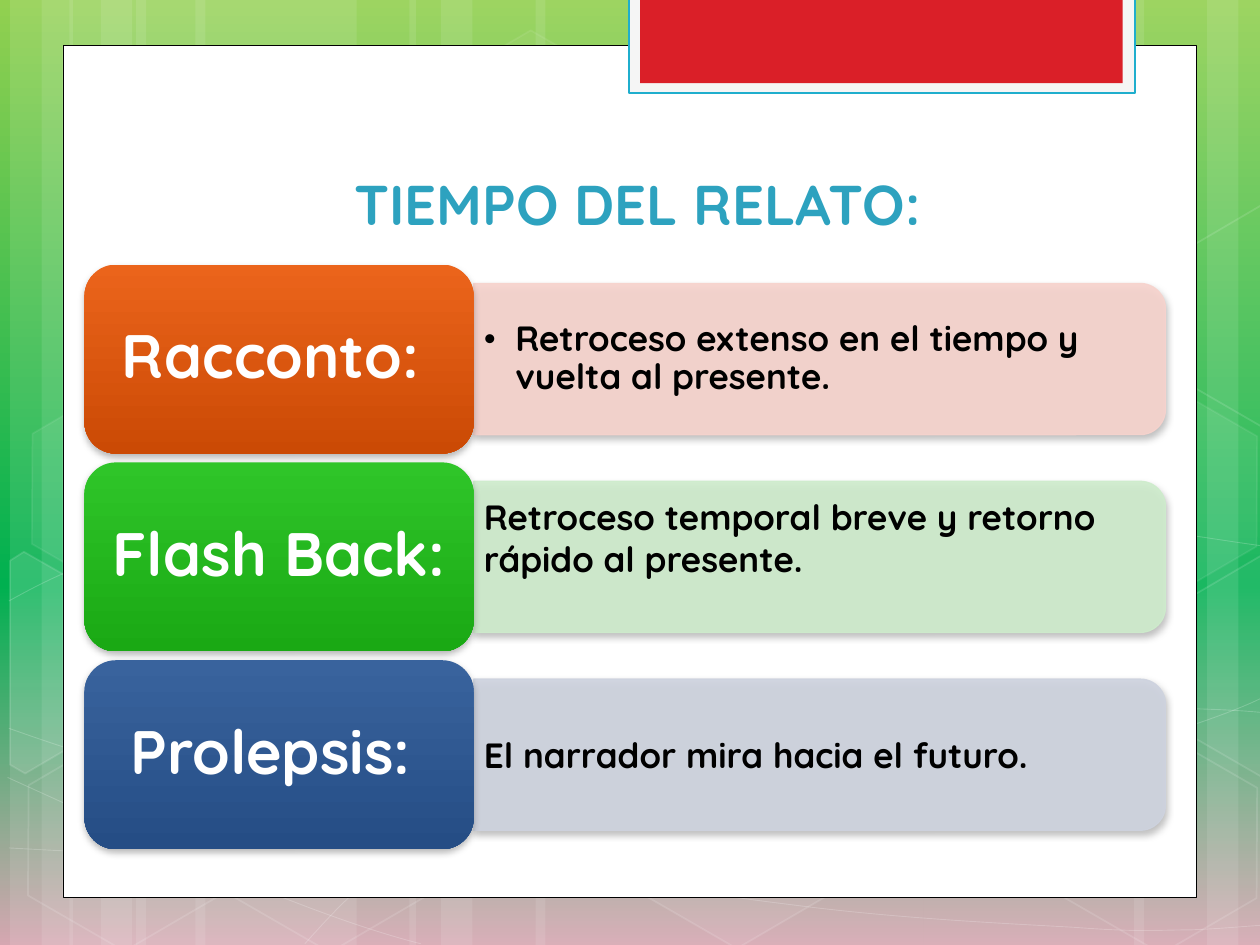
import lxml.etree
import pptx
import pptx.util
from pptx.dml.color import RGBColor
from pptx.enum.shapes import MSO_SHAPE
from pptx.enum.text import MSO_ANCHOR, MSO_AUTO_SIZE, PP_ALIGN
from pptx.oxml.ns import qn
from pptx.util import Inches

FONT = "Quicksand"
WHITE = RGBColor(0xFF, 0xFF, 0xFF)
BLACK = RGBColor(0, 0, 0)
TITLE_BLUE = RGBColor(0x2D, 0xA2, 0xBF)
TAB_BORDER = RGBColor(0x1F, 0xAE, 0xCD)
TAB_GRAY = RGBColor(0xF5, 0xF5, 0xF5)
TAB_RED = RGBColor(0xDA, 0x1F, 0x28)
BACKGROUND = [(0, RGBColor(0x92, 0xD0, 0x50)), (62, RGBColor(0x00, 0xB0, 0x50)),
              (100, RGBColor(0xD5, 0xA7, 0xB1))]

# Label, definition, label gradient top and bottom, bar colour
ROWS = [
    ("Racconto: ", "Retroceso extenso en el tiempo y vuelta al presente.",
     RGBColor(0xEB, 0x64, 0x1B), RGBColor(0xCB, 0x4A, 0x05), RGBColor(0xF7, 0xD3, 0xCD)),
    ("Flash Back: ", "Retroceso temporal breve y retorno rápido al presente.",
     RGBColor(0x2F, 0xC5, 0x29), RGBColor(0x1A, 0xA9, 0x14), RGBColor(0xCE, 0xEC, 0xCC)),
    ("Prolepsis: ", "El narrador mira hacia el futuro.",
     RGBColor(0x39, 0x63, 0x9D), RGBColor(0x25, 0x4D, 0x85), RGBColor(0xCE, 0xD3, 0xDF)),
]
ROW_TOP, ROW_PITCH, LABEL_HEIGHT = 2.1, 1.57, 1.5
LABEL_LEFT, LABEL_WIDTH = 0.67, 3.09
BAR_LENGTH, BAR_HEIGHT = 5.49, 1.2

# Left and width of the translucent vertical strips
STRIPS = [(1.08, 1.75), (0.08, 0.5), (0.33, 0.83), (1.55, 1.75), (0.55, 0.5), (0.8, 0.83),
          (7.33, 1.75), (9.58, 0.5), (9, 0.83), (4.25, 3.08), (3.25, 0.5), (3.5, 0.83)]
# Left, top, fill opacity and line opacity
HEXAGONS = [(3.34, 0.36, 4, 8), (4.97, 5.89, 6, 12), (0.11, 5.91, 0, 12),
            (0.14, 3.12, 7, 8), (1.74, 5.92, 0, 12), (7.53, 4.53, 10, 12),
            (8.34, 5.93, 0, 12), (8.34, 3.14, 7, 8)]
# Fill opacity and corners of the hexagons cut by the slide edge
CUT_HEXAGONS = [
    (10, [(0.08, 4.45), (0.19, 4.38), (0.96, 4.82), (0.95, 5.7), (0.2, 6.14), (0.08, 6.07)]),
    (4, [(9.26, 4.85), (10.01, 4.41), (10.09, 4.46), (10.09, 6.13), (10.02, 6.17), (9.26, 5.73)]),
    (0, [(9.26, 2.07), (10.01, 1.63), (10.1, 1.68), (10.09, 3.35), (10.02, 3.39), (9.26, 2.95)]),
]
# Bezier chains: a start point, then two control points and an end point per piece
CURVES = [
    [(0.07, 6.73), (0.61, 6.76), (1.15, 6.79), (1.9, 6.78), (2.65, 6.77), (3.58, 6.75),
     (4.58, 6.65), (5.58, 6.55), (7, 6.36), (7.92, 6.17), (8.83, 5.98), (9.77, 5.68),
     (10.07, 5.51)],
    [(0.07, 4.77), (0.36, 4.61), (0.65, 4.46), (1.21, 4.31), (1.78, 4.16), (2.59, 3.94),
     (3.47, 3.87), (4.36, 3.8), (5.44, 3.79), (6.54, 3.87), (7.64, 3.95), (9.47, 4.26),
     (10.07, 4.34)],
    [(0.06, 6.17), (1.27, 6.72), (2.47, 7.27), (3.34, 7.49)],
    [(0.07, 5.78), (0.38, 5.89), (0.7, 6), (1.28, 6.16), (1.86, 6.31), (2.73, 6.56),
     (3.57, 6.73), (4.4, 6.9), (5.45, 7.08), (6.28, 7.18), (7.11, 7.29), (8, 7.33),
     (8.53, 7.36), (9.05, 7.4), (9.19, 7.38), (9.45, 7.38), (9.71, 7.37), (9.89, 7.35),
     (10.07, 7.34)],
    [(2.42, 7.49), (2.6, 7.29), (2.78, 7.09), (3.02, 6.91), (3.26, 6.73), (3.6, 6.53),
     (3.88, 6.39), (4.16, 6.25), (4.33, 6.19), (4.7, 6.09), (5.06, 5.99), (5.73, 5.85),
     (6.08, 5.78), (6.44, 5.71), (6.49, 5.71), (6.8, 5.69), (7.11, 5.66), (7.6, 5.63),
     (7.94, 5.62), (8.29, 5.61), (8.86, 5.62), (8.86, 5.62), (9.2, 5.62), (9.7, 5.62),
     (10.06, 5.66)],
]


def set_solid(fill, color, opacity=100):
    """Fill with a colour at an opacity in percent; zero means no fill."""
    if opacity == 0:
        fill.background()
        return
    fill.solid()
    fill.fore_color.rgb = color
    if opacity < 100:
        color_element = fill._xPr.find(qn("a:solidFill")).find(qn("a:srgbClr"))
        lxml.etree.SubElement(color_element, qn("a:alpha"), val=str(opacity * 1000))


def set_gradient(fill, stops):
    """Fill with a top-to-bottom gradient of (percent, colour) stops."""
    fill.gradient()
    fill.gradient_angle = 270
    stop_list = fill.gradient_stops[0]._gs.getparent()
    for old_stop in list(stop_list):
        stop_list.remove(old_stop)
    for position, color in stops:
        stop = lxml.etree.SubElement(stop_list, qn("a:gs"), pos=str(position * 1000))
        lxml.etree.SubElement(stop, qn("a:srgbClr"), val=str(color))


def set_line(shape, color=None, width=1, opacity=100):
    if color is None:
        shape.line.fill.background()
        return
    shape.line.width = pptx.util.Pt(width)
    set_solid(shape.line.fill, color, opacity)


def add_box(slide, kind, left, top, width, height):
    shape = slide.shapes.add_shape(kind, Inches(left), Inches(top), Inches(width), Inches(height))
    shape.shadow.inherit = False
    set_line(shape)
    return shape


def add_outline(slide, points, closed):
    corners = [(Inches(x), Inches(y)) for x, y in points]
    builder = slide.shapes.build_freeform(*corners[0])
    builder.add_line_segments(corners[1:], close=closed)
    shape = builder.convert_to_shape()
    shape.shadow.inherit = False
    return shape


def add_curve(slide, chain):
    """Add an outline and join each three of its segments into one Bezier piece."""
    shape = add_outline(slide, chain, closed=False)
    outline = next(shape._element.iter(qn("a:path")))
    segments = outline.findall(qn("a:lnTo"))
    for start in range(0, len(segments), 3):
        piece = lxml.etree.SubElement(outline, qn("a:cubicBezTo"))
        for segment in segments[start:start + 3]:
            piece.append(segment[0])
            outline.remove(segment)
    return shape


def add_soft_shadow(shape):
    effects = shape._element.spPr.find(qn("a:effectLst"))
    shadow = lxml.etree.SubElement(
        effects, qn("a:outerShdw"), blurRad=str(pptx.util.Pt(4)), dist=str(pptx.util.Pt(2)),
        dir="5400000", rotWithShape="0")
    color = lxml.etree.SubElement(shadow, qn("a:srgbClr"), val=str(BLACK))
    lxml.etree.SubElement(color, qn("a:alpha"), val="28000")


def write_text(shape, text, size, color, alignment, anchor=MSO_ANCHOR.MIDDLE):
    frame = shape.text_frame
    frame.word_wrap = True
    frame.auto_size = MSO_AUTO_SIZE.NONE
    frame.vertical_anchor = anchor
    paragraph = frame.paragraphs[0]
    paragraph.text = text
    paragraph.alignment = alignment
    font = paragraph.font
    font.name, font.size, font.bold = FONT, pptx.util.Pt(size), True
    font.color.rgb = color
    return paragraph


def set_insets(shape, horizontal, vertical):
    frame = shape.text_frame
    frame.margin_left = frame.margin_right = Inches(horizontal)
    frame.margin_top = frame.margin_bottom = Inches(vertical)


def add_bullet(paragraph):
    properties = paragraph._p.get_or_add_pPr()
    properties.set("marL", str(Inches(0.25)))
    properties.set("indent", str(-Inches(0.25)))
    lxml.etree.SubElement(properties, qn("a:buFont"), typeface=FONT)
    lxml.etree.SubElement(properties, qn("a:buChar"), char="•")
    # The default text properties must follow the bullet
    properties.append(properties.find(qn("a:defRPr")))


def add_backdrop(slide):
    set_gradient(slide.background.fill, BACKGROUND)
    for left, width in STRIPS:
        set_solid(add_box(slide, MSO_SHAPE.RECTANGLE, left, 0, width, 7.5).fill, WHITE, 10)
    for chain in CURVES:
        curve = add_curve(slide, chain)
        curve.fill.background()
        set_line(curve, WHITE, 0.5, 20)
    for left, top, fill_opacity, line_opacity in HEXAGONS:
        hexagon = add_box(slide, MSO_SHAPE.HEXAGON, left, top, 1.75, 1.52)
        hexagon.adjustments[0] = 0.285
        hexagon.rotation = 30
        set_solid(hexagon.fill, WHITE, fill_opacity)
        set_line(hexagon, WHITE, 1, line_opacity)
    for opacity, corners in CUT_HEXAGONS:
        cut_hexagon = add_outline(slide, corners, closed=True)
        set_solid(cut_hexagon.fill, WHITE, opacity)
        set_line(cut_hexagon, WHITE, 1, 12)


def add_panel(slide):
    for box, color, border, width in [((0.5, 0.36, 9, 6.76), WHITE, BLACK, 0.5),
                                      ((4.99, -0.02, 4.02, 0.76), TAB_GRAY, TAB_BORDER, 1.25),
                                      ((5.08, -0.02, 3.83, 0.68), TAB_RED, None, 0)]:
        shape = add_box(slide, MSO_SHAPE.RECTANGLE, *box)
        set_solid(shape.fill, color)
        set_line(shape, border, width)


def place_title(slide, text):
    title = slide.shapes.title
    slide.shapes._spTree.append(title._element)  # in front of the panel
    title.left, title.top, title.width, title.height = map(Inches, (1.22, 0.68, 7.68, 1.25))
    write_text(title, text, 32, TITLE_BLUE, PP_ALIGN.CENTER, MSO_ANCHOR.BOTTOM)


def add_row(slide, top, label_text, definition, gradient_top, gradient_bottom, bar_color):
    """Add a label with its definition bar; return the definition's text box."""
    middle = top + LABEL_HEIGHT / 2
    bar_left = LABEL_LEFT + LABEL_WIDTH
    bar = add_box(slide, MSO_SHAPE.ROUND_2_SAME_RECTANGLE,
                  bar_left + (BAR_LENGTH - BAR_HEIGHT) / 2, middle - BAR_LENGTH / 2,
                  BAR_HEIGHT, BAR_LENGTH)
    bar.rotation = 90
    set_solid(bar.fill, bar_color, 90)
    set_line(bar, bar_color, 0.75, 90)
    add_soft_shadow(bar)

    text_box = slide.shapes.add_textbox(Inches(bar_left), Inches(middle - 0.54),
                                        Inches(5.44), Inches(1.08))
    set_insets(text_box, 0.08, 0.04)
    write_text(text_box, definition, 20, BLACK, PP_ALIGN.LEFT)

    label = add_box(slide, MSO_SHAPE.ROUNDED_RECTANGLE, LABEL_LEFT, top, LABEL_WIDTH, LABEL_HEIGHT)
    set_gradient(label.fill, [(0, gradient_top), (100, gradient_bottom)])
    add_soft_shadow(label)
    set_insets(label, 0.13, 0.07)
    write_text(label, label_text, 35, WHITE, PP_ALIGN.CENTER).line_spacing = 0.9
    return text_box


def main():
    presentation = pptx.Presentation()
    presentation.slide_width, presentation.slide_height = Inches(10), Inches(7.5)
    slide = presentation.slides.add_slide(presentation.slide_layouts[5])
    add_backdrop(slide)
    add_panel(slide)
    place_title(slide, "TIEMPO DEL RELATO:")
    racconto, flash_back, _ = [add_row(slide, ROW_TOP + index * ROW_PITCH, *row)
                               for index, row in enumerate(ROWS)]
    first_paragraph = racconto.text_frame.paragraphs[0]
    first_paragraph.line_spacing = 0.9
    add_bullet(first_paragraph)
    flash_back.text_frame.margin_bottom = Inches(0.35)
    presentation.save("out.pptx")


if __name__ == "__main__":
    main()
